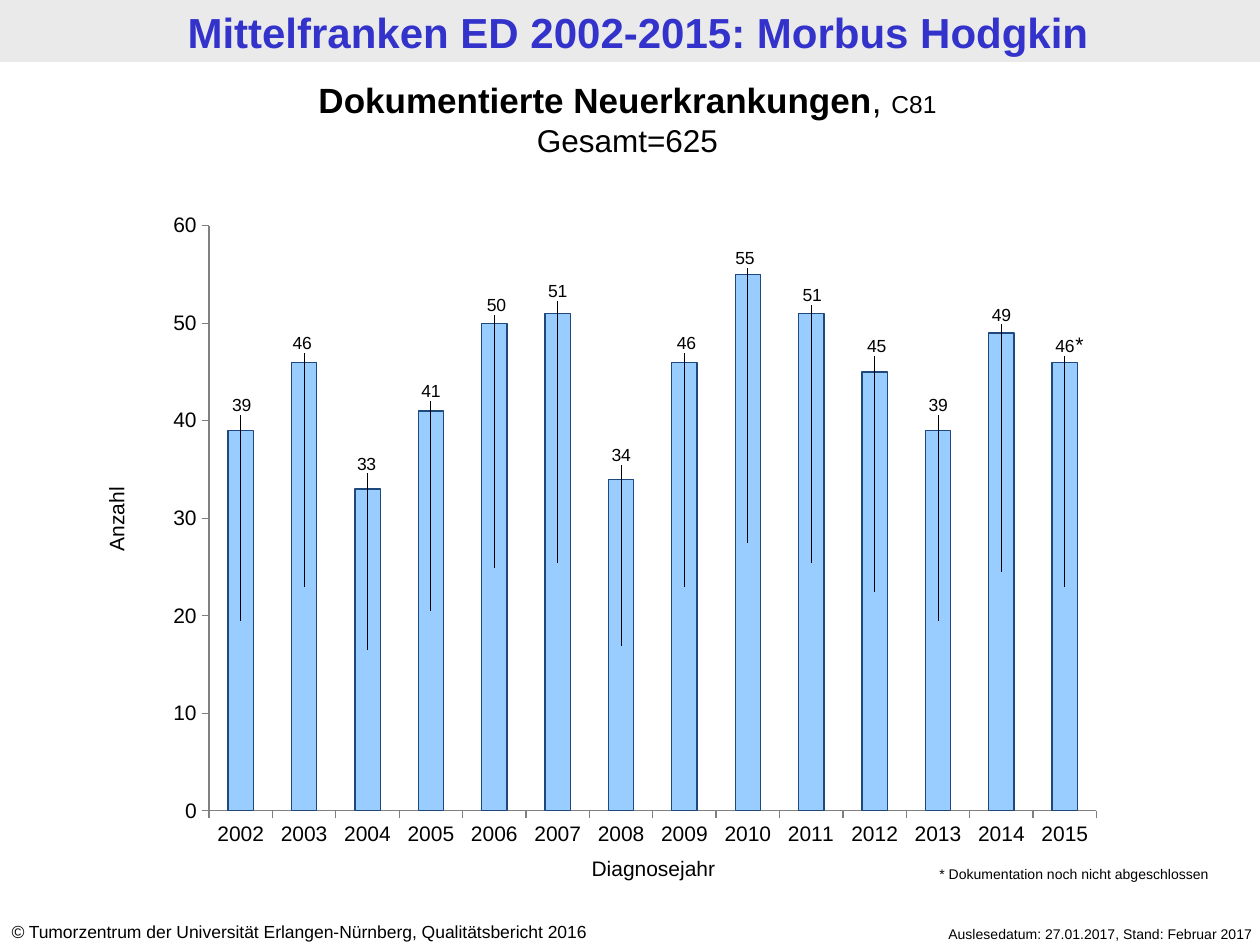
from lxml import etree
from pptx import Presentation
from pptx.chart.data import CategoryChartData
from pptx.dml.color import RGBColor
from pptx.enum.chart import XL_CHART_TYPE, XL_LABEL_POSITION, XL_TICK_MARK
from pptx.enum.shapes import MSO_SHAPE
from pptx.enum.text import MSO_ANCHOR, PP_ALIGN
from pptx.oxml.ns import qn
from pptx.util import Emu, Pt

STACK = XL_CHART_TYPE.COLUMN_STACKED
MID_LABEL = XL_LABEL_POSITION.CENTER
OUT, NONE = XL_TICK_MARK.OUTSIDE, XL_TICK_MARK.NONE
RECT = MSO_SHAPE.RECTANGLE
MIDDLE, BOTTOM = MSO_ANCHOR.MIDDLE, MSO_ANCHOR.BOTTOM
LEFT, MID, RIGHT = PP_ALIGN.LEFT, PP_ALIGN.CENTER, PP_ALIGN.RIGHT

PX = 914400 / 126
FONT = "Arial"
HEX = {"band": "EAEAEA", "title": "3333CC", "text": "000000",
       "bar": "99CCFF", "edge": "1F497D", "axis": "808080"}
RGB = {name: RGBColor.from_string(code) for name, code in HEX.items()}

deck = Presentation()
deck.slide_width, deck.slide_height = Emu(int(1260 * PX)), Emu(int(945 * PX))
slide = deck.slides.add_slide(deck.slide_layouts[6])


def add_text(box, align, lines, color="text", anchor=MIDDLE, turn=0):
    shape = slide.shapes.add_textbox(*[Emu(int(n * PX)) for n in box])
    shape.rotation = turn
    frame = shape.text_frame
    frame.word_wrap = True
    frame.vertical_anchor = anchor
    for i, runs in enumerate(lines):
        para = frame.add_paragraph() if i else frame.paragraphs[0]
        para.alignment = align
        for text, size, style in runs:
            run = para.add_run()
            run.text = text
            run.font.name, run.font.size = FONT, Pt(size)
            run.font.bold, run.font.italic = style == "b", style == "i"
            run.font.color.rgb = RGB[color]


def add_layout(parent, spot, parts):
    layout = etree.Element(qn("c:layout"))
    manual = etree.SubElement(layout, qn("c:manualLayout"))
    for tag, val in parts.items():
        etree.SubElement(manual, qn("c:" + tag)).set("val", str(val))
    parent.insert(spot, layout)


band = slide.shapes.add_shape(RECT, 0, 0, deck.slide_width, Emu(int(62 * PX)))
band.shadow.inherit = False
band.fill.solid()
band.fill.fore_color.rgb = RGB["band"]
band.line.fill.background()

add_text((8, 1, 1260, 62), MID,
         [[("Mittelfranken ED 2002-2015: Morbus Hodgkin", 24, "b")]],
         "title", BOTTOM)
add_text((-1, 915, 660, 34), LEFT,
         [[("©", 10, "i"),
           (" Tumorzentrum der Universität Erlangen-Nürnberg, "
            "Qualitätsbericht 2016", 10, "")]])
add_text((838, 919, 427, 30), RIGHT,
         [[("Auslesedatum: 27.01.2017, Stand: Februar 2017", 8, "")]])

WIDE, HIGH, UNIT = 971, 648, 9.75
cases = [39, 46, 33, 41, 50, 51, 34, 46, 55, 51, 45, 39, 49, 46]
shifts = [1, -2, -1, 0, 2, 0, 0, 2, -3, 1, 2, 0, 0, 0]
rises = [25, 19, 25, 20, 18, 22, 24, 19, 16, 18, 25, 25, 18, 16]

data = CategoryChartData()
data.categories = [str(year) for year in range(2002, 2016)]
data.add_series("Series 1", cases)
spot = [Emu(int(n * PX)) for n in (145, 207, WIDE, HIGH)]
chart = slide.shapes.add_chart(STACK, *spot, data).chart
chart.has_legend = chart.has_title = False
chart.font.name, chart.font.size = FONT, Pt(12)
chart.font.color.rgb = RGB["text"]

area = chart._chartSpace.chart.plotArea
for old in area.findall(qn("c:layout")):
    area.remove(old)
add_layout(area, 0, {"layoutTarget": "inner", "xMode": "edge", "yMode": "edge",
                     "x": 0.066, "y": 0.029, "w": 0.914, "h": 0.903})

for axis in (chart.category_axis, chart.value_axis):
    axis.has_major_gridlines = False
    axis.major_tick_mark, axis.minor_tick_mark = OUT, NONE
    axis.format.line.color.rgb = RGB["axis"]
    axis.format.line.width = Pt(0.75)
chart.value_axis.minimum_scale = 0
chart.value_axis.maximum_scale = 60
chart.value_axis.major_unit = 10

plot = chart.plots[0]
plot.gap_width, plot.overlap = 150, 100
plot.vary_by_categories = False
bars = plot.series[0]
bars.format.fill.solid()
bars.format.fill.fore_color.rgb = RGB["bar"]
bars.format.line.color.rgb = RGB["edge"]
bars.format.line.width = Pt(0.75)
bars.data_labels.show_value = True
bars.data_labels.font.size = Pt(10)

for i in range(len(cases)):
    label = bars.points[i].data_label
    label.font.size = Pt(10)
    label.position = MID_LABEL
marks = bars._element.findall(".//" + qn("c:dLbl"))
for mark, case, shift, rise in zip(marks, cases, shifts, rises):
    lift = case * UNIT / 2 + rise
    add_layout(mark, 1, {"x": shift / WIDE, "y": -lift / HIGH})

add_text((-5, 72, 1265, 93), MID,
         [[("Dokumentierte Neuerkrankungen", 20, "b"), (", ", 20, ""),
           ("C81", 14, "")],
          [("Gesamt=625", 18, "")]])
add_text((512, 849, 283, 38), MID, [[("Diagnosejahr", 12, "")]])
add_text((39, 500, 154, 38), MID, [[("Anzahl", 12, "")]], turn=270)
add_text((1047, 325, 49, 38), RIGHT, [[("*", 12, "")]])
add_text((927, 859, 312, 30), LEFT,
         [[("* Dokumentation noch nicht abgeschlossen", 8, "")]])

deck.save("out.pptx")
